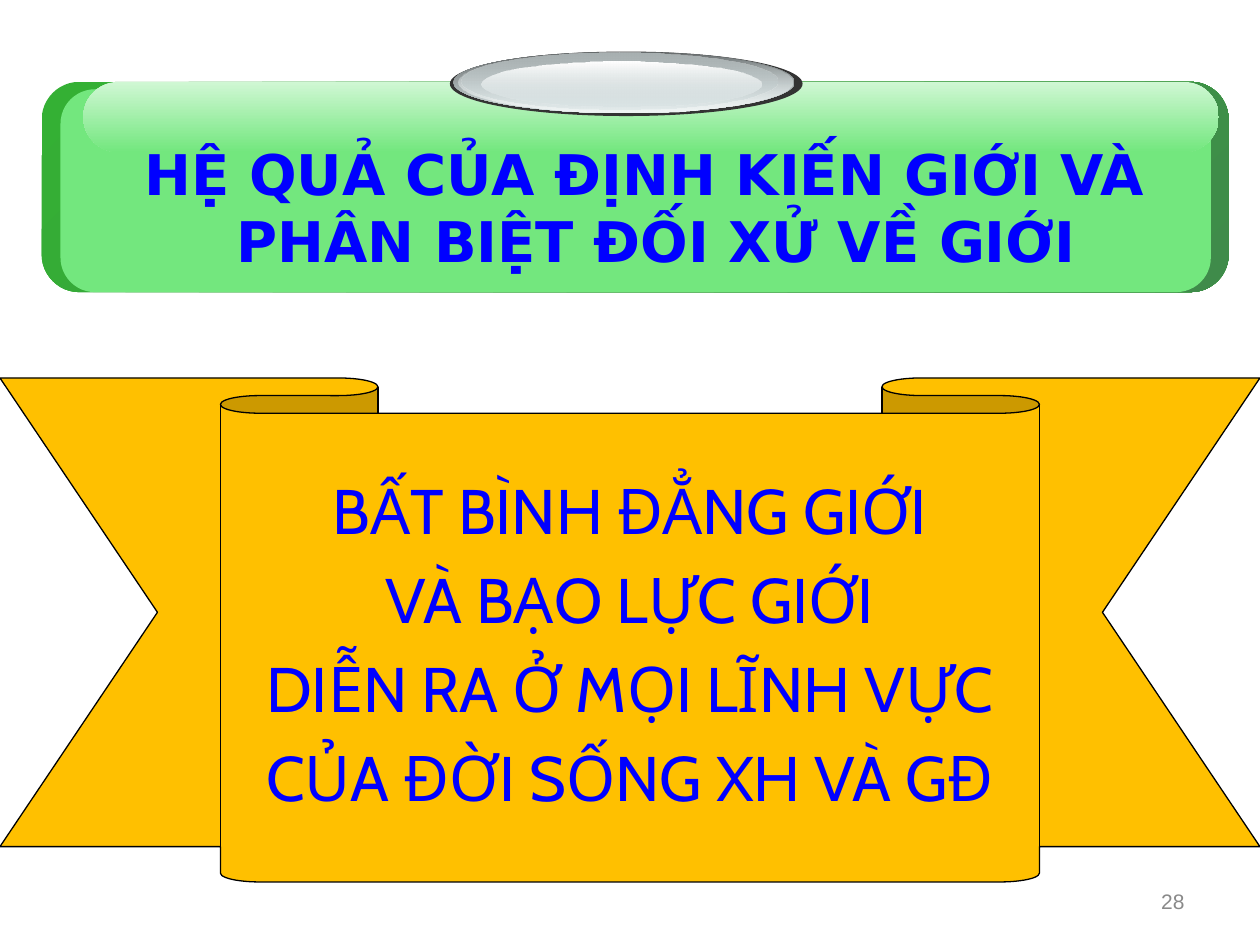
from dataclasses import dataclass

from lxml.etree import SubElement
from pptx import Presentation
from pptx.dml.color import RGBColor
from pptx.enum.shapes import MSO_SHAPE
from pptx.enum.text import MSO_ANCHOR, PP_ALIGN
from pptx.oxml.ns import qn
from pptx.util import Cm, Pt


@dataclass(frozen=True)
class Theme:
    text: str = "0000FF"
    muted: str = "898989"
    ribbon: str = "FFC000"
    outline: str = "000000"
    face: str = "73E77E"
    gloss: str = "D0F7D4"
    edge_left: str = "34B034"
    edge_right: str = "3F8B4A"
    rim: str = "333333"
    steel: str = "636869"
    grey: str = "AAB2B3"
    silver: str = "D6E1E2"
    pearl: str = "F1F5F5"
    white: str = "FFFFFF"
    title_font: str = "DejaVu Sans"
    body_font: str = "Cabin"
    number_font: str = "Arial"
    title_size: int = 32
    body_size: int = 36
    number_size: int = 12


THEME = Theme()


def apply_format(target, values):
    for name, value in values.items():
        setattr(target, name, value)


def place(box, left, top, width, height):
    return [Cm(value) for value in (box[0] + left, box[1] + top, width, height)]


def fill_gradient(shape, stops, angle):
    shape.fill.gradient()
    shape.fill.gradient_angle = 360 - angle
    for stop, (color, opacity) in zip(shape.fill.gradient_stops, stops):
        stop.color.rgb = RGBColor.from_string(color)
        if opacity < 100:
            color_element = next(stop._gs.iter(qn("a:srgbClr")))
            SubElement(color_element, qn("a:alpha"), val=str(opacity * 1000))


def add_plain_shape(shapes, kind, position, fill, angle=90):
    shape = shapes.add_shape(kind, *position)
    shape.shadow.inherit = False
    shape.line.fill.background()
    if isinstance(fill, str):
        shape.fill.solid()
        shape.fill.fore_color.rgb = RGBColor.from_string(fill)
    else:
        fill_gradient(shape, fill, angle)
    return shape


def write_lines(frame, lines, font_values, color, paragraph_values):
    for index, line in enumerate(lines):
        paragraph = frame.add_paragraph() if index else frame.paragraphs[0]
        apply_format(paragraph, paragraph_values)
        run = paragraph.add_run()
        run.text = line
        apply_format(run.font, font_values)
        run.font.color.rgb = RGBColor.from_string(color)


def add_slide_number(slide, box, number):
    frame = slide.shapes.add_textbox(*place(box, 0, 0, *box[2:])).text_frame
    apply_format(frame, {"word_wrap": True, "vertical_anchor": MSO_ANCHOR.MIDDLE})
    write_lines(frame, [number],
                {"name": THEME.number_font, "size": Pt(THEME.number_size)},
                THEME.muted, {"alignment": PP_ALIGN.RIGHT})


def add_ribbon(slide, box, lines):
    ribbon = add_plain_shape(slide.shapes, MSO_SHAPE.DOWN_RIBBON,
                             place(box, 0, 0, *box[2:]), THEME.ribbon)
    ribbon.adjustments[0] = 0.07
    ribbon.adjustments[1] = 0.65
    ribbon.line.color.rgb = RGBColor.from_string(THEME.outline)
    ribbon.line.width = Pt(0.75)
    frame = ribbon.text_frame
    apply_format(frame, {"word_wrap": False, "vertical_anchor": MSO_ANCHOR.MIDDLE})
    write_lines(frame, lines,
                {"name": THEME.body_font, "size": Pt(THEME.body_size)}, THEME.text,
                {"alignment": PP_ALIGN.CENTER, "line_spacing": 0.9,
                 "space_before": Pt(12)})


def add_title_plate(shapes, box):
    plates = [
        ((0, 0.61, 23.93, 4.24), 0.18,
         [(THEME.edge_left, 100), (THEME.edge_right, 100)], 45),
        ((0.38, 0.76, 23.19, 4.09), 0.17, THEME.face, 0),
        ((0.84, 0.61, 22.89, 1.42), 0.5,
         [(THEME.gloss, 100), (THEME.face, 100)], 90),
    ]
    for position, rounding, fill, angle in plates:
        plate = add_plain_shape(shapes, MSO_SHAPE.ROUNDED_RECTANGLE,
                                place(box, *position), fill, angle)
        plate.adjustments[0] = rounding


def add_title_button(shapes, box):
    ovals = [
        ((0, 0, 7.11, 1.3), THEME.rim),
        ((0.07, 0, 6.88, 1.24), [(THEME.steel, 100), (THEME.silver, 100)]),
        ((0.18, 0, 6.73, 1.22), [(THEME.silver, 0), (THEME.pearl, 100)]),
        ((0.23, 0.03, 6.38, 1.14), [(THEME.grey, 100), (THEME.silver, 48)]),
        ((0.63, 0.2, 5.66, 0.91), [(THEME.white, 100), (THEME.silver, 38)]),
    ]
    for position, fill in ovals:
        add_plain_shape(shapes, MSO_SHAPE.OVAL, place(box, *position), fill)


def add_title(slide, box, title):
    shapes = slide.shapes.add_group_shape().shapes
    add_title_plate(shapes, box)
    add_title_button(shapes, (box[0] + 8.23, box[1]))
    frame = shapes.add_textbox(*place(box, 0.79, 1.65, 22.73, 3.23)).text_frame
    frame.word_wrap = True
    write_lines(frame, [title],
                {"name": THEME.title_font, "size": Pt(THEME.title_size), "bold": True},
                THEME.text, {"alignment": PP_ALIGN.CENTER})
    properties = frame.paragraphs[0]._p.get_or_add_pPr()
    for name, value in {"marL": Cm(0.48), "indent": Cm(-0.48)}.items():
        properties.set(name, str(value))


def main():
    presentation = Presentation()
    apply_format(presentation, {"slide_width": Cm(25.4), "slide_height": Cm(19.05)})
    slide = presentation.slides.add_slide(presentation.slide_layouts[6])
    add_slide_number(slide, (18.21, 17.65, 5.92, 1.02), "28")
    add_ribbon(slide, (0, 7.62, 25.4, 10.16), [
        "BẤT BÌNH ĐẲNG GIỚI",
        "VÀ BẠO LỰC GIỚI",
        "DIỄN RA Ở MỌI LĨNH VỰC",
        "CỦA ĐỜI SỐNG XH VÀ GĐ",
    ])
    add_title(slide, (0.84, 1.04),
              "HỆ QUẢ CỦA ĐỊNH KIẾN GIỚI VÀ PHÂN BIỆT ĐỐI XỬ VỀ GIỚI")
    presentation.save("out.pptx")


if __name__ == "__main__":
    main()
